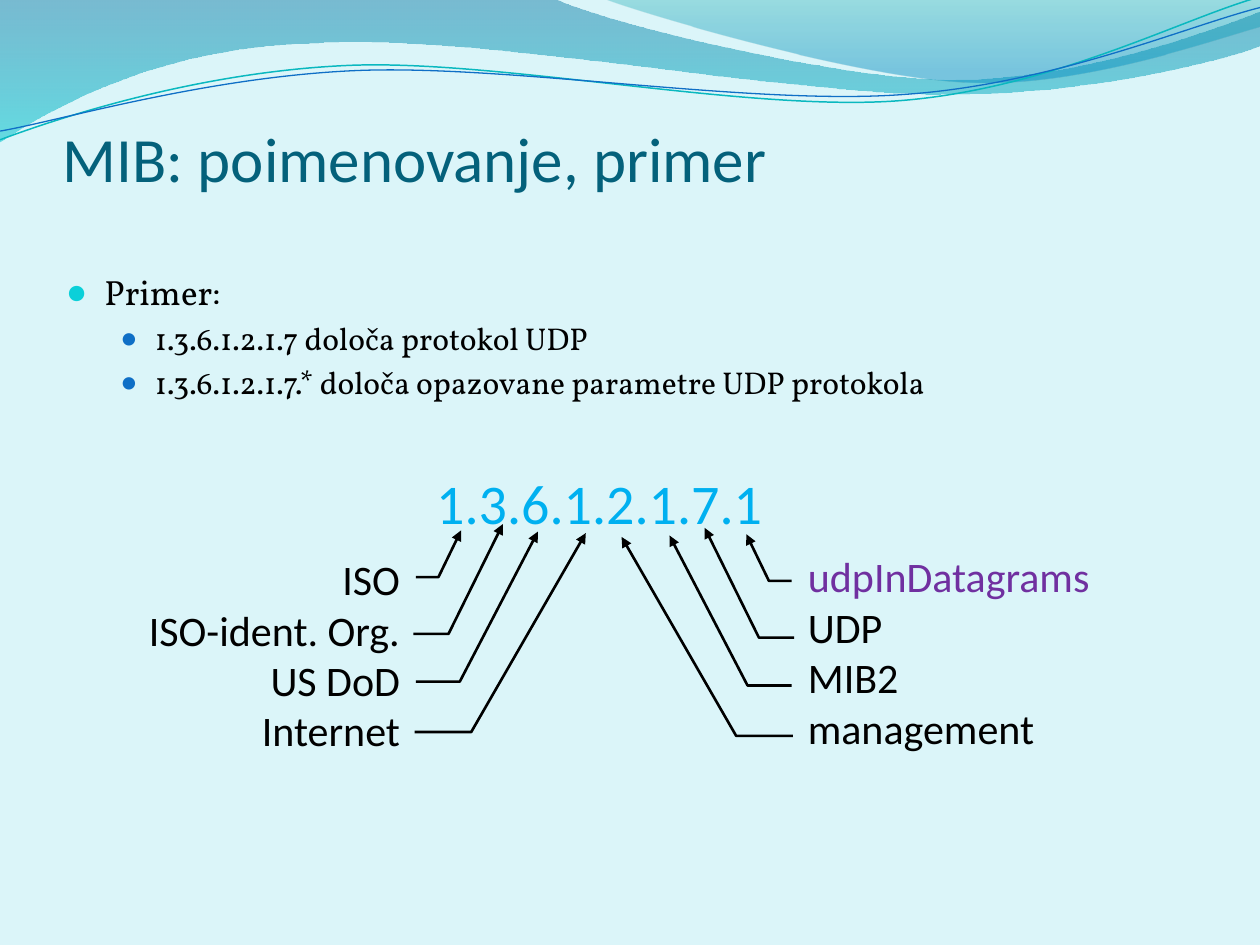
from dataclasses import dataclass
from typing import NamedTuple

from lxml.etree import SubElement
from pptx import Presentation
from pptx.dml.color import RGBColor
from pptx.enum.text import MSO_ANCHOR, PP_ALIGN
from pptx.oxml.ns import qn
from pptx.util import Pt

Point = tuple[float, float]


@dataclass(frozen=True)
class Theme:
    back: str = "DBF5F9"
    title: str = "04617B"
    ink: str = "000000"
    code: str = "00B0F0"
    leaf: str = "7030A0"
    teal: str = "0AB8BF"
    blue: str = "0F6FC6"
    aqua: str = "0BD0D9"
    sans: str = "Calibri"
    serif: str = "Vollkorn"
    title_size: float = 36
    code_size: float = 32
    label_size: float = 24
    item_size: float = 20
    sub_size: float = 18


class Stop(NamedTuple):
    place: float
    color: str
    alpha: int


class Wave(NamedTuple):
    """Start point, then steps: 2 numbers make a line, 6 a Bézier curve."""
    start: Point
    steps: list[tuple[float, ...]]
    stops: tuple[Stop, ...] = ()
    color: str = ""
    width: float = 0


class Hook(NamedTuple):
    start: Point
    bend: float
    tip: Point


class Item(NamedTuple):
    text: str
    size: float
    margin: float
    hang: float
    color: str
    scale: int


class Line(NamedTuple):
    text: str
    color: str


class Box(NamedTuple):
    left: float
    top: float
    width: float
    height: float


THEME = Theme()
WAVES = [
    Wave((0, 0), [(316.8, -0.7), (342.7, 12.2, 478.1, 45.4, 545.8, 45.4),
                  (614.2, 45.4, 689.8, 18.7, 720, 6.5), (720.7, 25.9),
                  (707.8, 31.7, 626.4, 54.7, 537.1, 54),
                  (447.8, 54, 275, 20.2, 185, 24.5),
                  (92.9, 25.9, 33.1, 59.8, -0.7, 81.4), (0, 0)],
         stops=(Stop(0, "0074A1", 45), Stop(1, "00C6CF", 55))),
    Wave((344.9, -0.7), [(366.5, 7.9, 491, 44.6, 553.7, 46.8),
                         (616.3, 49.7, 691.9, 23, 720, 15.1), (720, 0),
                         (344.9, -0.7)],
         stops=(Stop(0, "00A1A9", 30), Stop(0.8, "008BBF", 45))),
    Wave((0, 79.9), [(34.6, 67, 113.8, 41, 199.4, 37.4),
                     (284.4, 33.8, 427, 64.1, 513.4, 57.6),
                     (599.8, 51.1, 675.4, 10.8, 718.6, -1.4)],
         color=THEME.teal, width=0.85),
    Wave((0, 74.9), [(33.8, 69.1, 118.1, 43.9, 203.8, 40.3),
                     (290.2, 36.7, 429.8, 60.5, 516.2, 54),
                     (601.9, 48.2, 677.5, 15.1, 720, 4.3)],
         color=THEME.blue, width=0.75),
]
HOOKS = [
    Hook((237.6, 329.8), 250.6, (263.5, 303.1)),
    Hook((236.2, 362.2), 256.3, (287.3, 299.5)),
    Hook((237.6, 389.5), 262.8, (307.4, 303.8)),
    Hook((236.9, 418.3), 269.3, (334.8, 304.6)),
]
MIRROR, DROP = 690, 2.2
ITEMS = [Item("Primer:", THEME.item_size, 21.6, 21.6, THEME.aqua, 95)] + [
    Item(text, THEME.sub_size, 50.4, 19.4, THEME.blue, 85)
    for text in ("1.3.6.1.2.1.7 določa protokol UDP",
                 "1.3.6.1.2.1.7.* določa opazovane parametre UDP protokola")]
LEFT = [Line(text, THEME.ink)
        for text in ("ISO", "ISO-ident. Org.", "US DoD", "Internet")]
RIGHT = [Line("udpInDatagrams", THEME.leaf)] + [
    Line(text, THEME.ink) for text in ("UDP", "MIB2", "management")]


def rgb(code: str) -> RGBColor:
    return RGBColor.from_string(code)


def outline(slide, points: list[Point], closed: bool = False):
    first, *rest = [(Pt(x), Pt(y)) for x, y in points]
    maker = slide.shapes.build_freeform(*first)
    maker.add_line_segments(rest, close=closed)
    shape = maker.convert_to_shape()
    shape.shadow.inherit = False
    return shape


def stroke(shape, color: str, width: float) -> None:
    shape.fill.background()
    shape.line.color.rgb = rgb(color)
    shape.line.width = Pt(width)


def round_off(shape, steps: list[tuple[float, ...]]) -> None:
    """Turn the three line segments of each six-number step into one curve."""
    lines = iter(list(shape.element.spPr.iter(qn("a:lnTo"))))
    for step in steps:
        parts = [next(lines) for _ in range(len(step) // 2)]
        if len(parts) == 3:
            bezier = SubElement(parts[0].getparent(), qn("a:cubicBezTo"))
            parts[0].addprevious(bezier)
            for part in parts:
                bezier.append(part[0])
                part.getparent().remove(part)


def draw_wave(slide, wave: Wave) -> None:
    points = [wave.start] + [step[k:k + 2] for step in wave.steps
                             for k in range(0, len(step), 2)]
    shape = outline(slide, points, closed=bool(wave.stops))
    round_off(shape, wave.steps)
    if not wave.stops:
        stroke(shape, wave.color, wave.width)
        return
    shape.line.fill.background()
    shape.fill.gradient()
    shape.fill.gradient_angle = 270
    for stop, want in zip(shape.fill.gradient_stops, wave.stops):
        stop.position = want.place
        stop.color.rgb = rgb(want.color)
    tints = shape.element.spPr.iter(qn("a:srgbClr"))
    for tint, want in zip(tints, wave.stops):
        SubElement(tint, qn("a:alpha"), val=str(want.alpha * 1000))


def draw_hook(slide, hook: Hook) -> None:
    shape = outline(slide, [hook.start, (hook.bend, hook.start[1]), hook.tip])
    stroke(shape, THEME.ink, 1.5)
    edge = shape.element.spPr.find(qn("a:ln"))
    SubElement(edge, qn("a:tailEnd"), type="triangle")


def flip(hook: Hook) -> Hook:
    """Mirror a left hook to the right side."""
    (x, y), bend, (tip, top) = hook
    return Hook((MIRROR - x, y + DROP), MIRROR - bend, (MIRROR - tip, top + DROP))


def set_font(para, name: str, size: float, color: str) -> None:
    para.font.name = name
    para.font.size = Pt(size)
    para.font.color.rgb = rgb(color)


def add_text(slide, box: Box, lines: list[Line], size: float,
             align=PP_ALIGN.LEFT, wrap: bool = False):
    frame = slide.shapes.add_textbox(*map(Pt, box)).text_frame
    frame.word_wrap = wrap
    frame.text = "\n".join(line.text for line in lines)
    for para, line in zip(frame.paragraphs, lines):
        para.alignment = align
        set_font(para, THEME.sans, size, line.color)
    return frame


def add_title(slide) -> None:
    frame = add_text(slide, Box(36, 54.7, 648, 56.9),
                     [Line("MIB: poimenovanje, primer", THEME.title)],
                     THEME.title_size, wrap=True)
    frame.vertical_anchor = MSO_ANCHOR.BOTTOM
    frame.margin_left = frame.margin_right = frame.margin_bottom = 0


def add_items(slide, box: Box, items: list[Item]) -> None:
    frame = slide.shapes.add_textbox(*map(Pt, box)).text_frame
    frame.word_wrap = True
    frame.text = "\n".join(item.text for item in items)
    for para, item in zip(frame.paragraphs, items):
        props = para._p.get_or_add_pPr()
        props.set("marL", str(Pt(item.margin)))
        props.set("indent", str(-Pt(item.hang)))
        tint = SubElement(props, qn("a:buClr"))
        SubElement(tint, qn("a:srgbClr"), val=item.color)
        SubElement(props, qn("a:buSzPct"), val=str(item.scale * 1000))
        SubElement(props, qn("a:buFont"), typeface=THEME.sans)
        SubElement(props, qn("a:buChar"), char="●")
        para.space_before = Pt(item.size * 0.2)
        set_font(para, THEME.serif, item.size, THEME.ink)


def main() -> None:
    deck = Presentation()
    deck.slide_width, deck.slide_height = Pt(720), Pt(540)
    slide = deck.slides.add_slide(deck.slide_layouts[6])
    slide.background.fill.solid()
    slide.background.fill.fore_color.rgb = rgb(THEME.back)
    for wave in WAVES:
        draw_wave(slide, wave)
    add_items(slide, Box(31, 151.2, 657.4, 334.8), ITEMS)
    add_title(slide)
    add_text(slide, Box(242.2, 264.2, 203, 46.1),
             [Line("1.3.6.1.2.1.7.1", THEME.code)], THEME.code_size)
    add_text(slide, Box(76.6, 312.8, 159.1, 123.8), LEFT, THEME.label_size,
             PP_ALIGN.RIGHT)
    for hook in HOOKS + [flip(hook) for hook in HOOKS]:
        draw_hook(slide, hook)
    add_text(slide, Box(454.6, 311.3, 177.1, 123.8), RIGHT, THEME.label_size)
    deck.save("out.pptx")


if __name__ == "__main__":
    main()
